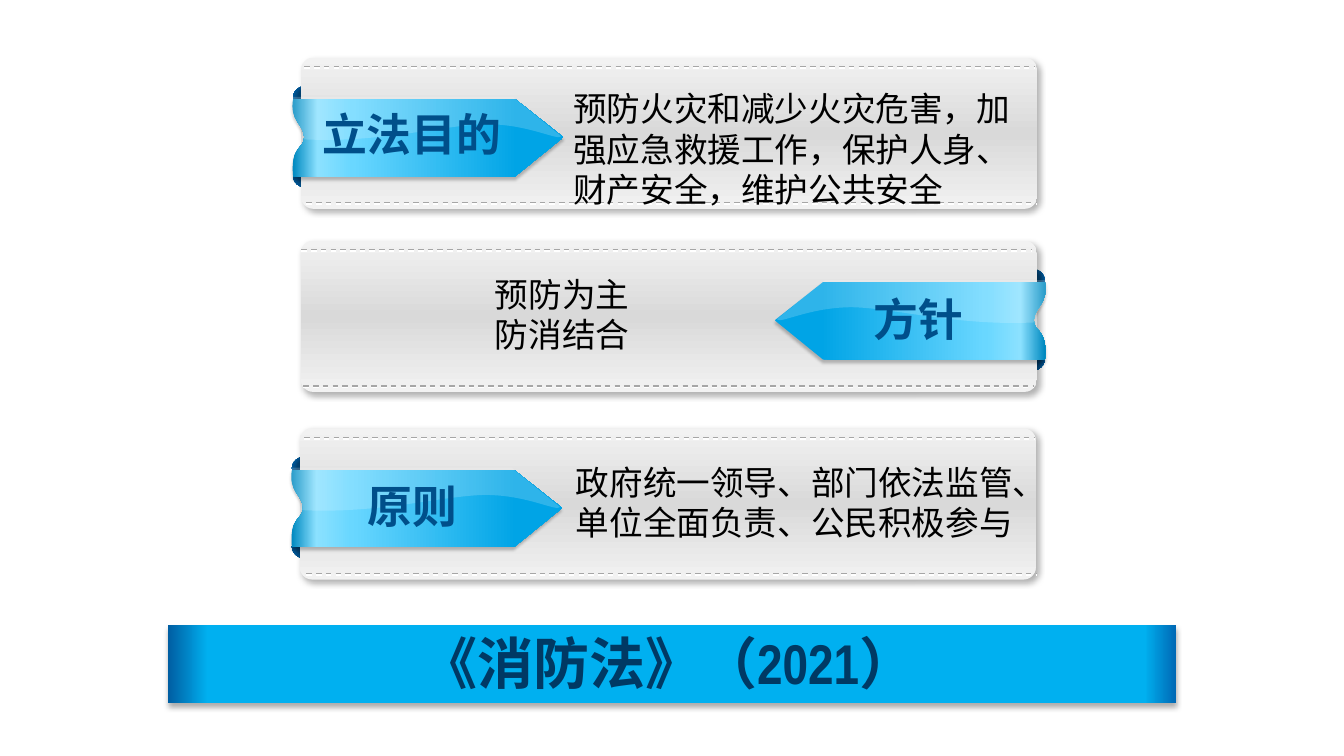
from dataclasses import dataclass
from typing import NamedTuple

from pptx import Presentation
from pptx import util as u
from pptx.dml.color import RGBColor
from pptx.enum import dml, lang, shapes, text
from pptx.oxml import parse_xml
from pptx.oxml.ns import nsdecls, qn

CELL = u.Inches(0.1)  # every length below is in cells of this square grid
COLS, ROWS = 133.33, 75
CARD_W, CARD_H = 73, 15
COLORS = {"label": "004F8A", "title": "003964", "body": "000000",
          "dash": "A6A6A6", "white": "FFFFFF", "black": "000000"}
CJK_FONT = "Noto Sans CJK SC"
LABEL_FONT = "Arial Narrow"

# Outlines relative to a card's corner: a pair is a line, six numbers a curve
RIBBON = [(-0.8, 4.1), (21.2, 4.1), (26, 7.9), (21.2, 11.8), (-0.8, 11.8),
          (-1.1, 8.7, 0.3, 9.1, 0.3, 7.9), (0.3, 6.6, -1.2, 6.3, -0.8, 4.1)]
GLOSS = [(-1, 3.9), (21, 3.9), (25.8, 7.8), (25.5, 8.3, 22.6, 6.6, 18.3, 6.6),
         (14, 6.7, 7.8, 8.5, 0.1, 8.1), (0.1, 7.9, 0.1, 7.8, 0.1, 7.7),
         (0.1, 6.5, -1.4, 6.2, -1, 3.9)]


class Shadow(NamedTuple):
    color: str
    alpha: int
    blur: float
    dist: float
    angle: int


class Gradient(NamedTuple):
    stops: tuple
    angle: int = 0
    circle: bool = False


FOLD_FILL = Gradient(((44, "004272"), (81, "005EA2"), (100, "0070C0")), circle=True)
CARD_FILL = Gradient(((0, "F2F2F2"), (50, "D9D9D9"), (100, "F2F2F2")), 90)
RIBBON_STOPS = ((0, "0089C0"), (9, "8BE1FF"), (22, "69D7FF"), (83, "00A4E6"))
BANNER_FILL = Gradient(((0, "005EA2"), (4, "00B0F0"), (97, "00ADED"), (100, "0069B5")))
CARD_SHADOW = Shadow(COLORS["black"], 30, 4.5, 2.6, 53)
RIBBON_SHADOW = Shadow(COLORS["black"], 23, 2, 2, 90)
BANNER_SHADOW = Shadow(COLORS["black"], 32, 4, 3, 90)
DASH_SHADOW = Shadow(COLORS["white"], 100, 0, 1, 90)


@dataclass
class Card:
    x: float
    y: float
    dash_x: float
    label: str
    label_at: tuple
    body: list
    body_at: tuple
    body_h: float
    mirrored: bool = False


CARDS = [
    Card(29.88, 5.72, 30.2, "立法目的", (30.1, 11.1),
         ["预防火灾和减少火灾危害，加强应急救援工作，保护人身、财产安全，维护公共安全"],
         (55.9, 8.25), 13.1),
    Card(29.86, 23.88, 29.9, "方针", (80.36, 29.5),
         ["预防为主", "防消结合"], (32.26, 26.66), 9.1, mirrored=True),
    Card(29.76, 42.5, 30.2, "原则", (30.16, 48),
         ["政府统一领导、部门依法监管、单位全面负责、公民积极参与"],
         (56.15, 45.3), 9.1),
]


def g(n: float) -> int:
    """Cells to EMU."""
    return round(n * CELL)


def shadow_xml(sh: Shadow):
    return parse_xml(
        f'<a:outerShdw {nsdecls("a")} blurRad="{u.Pt(sh.blur)}" dist="{u.Pt(sh.dist)}" '
        f'dir="{sh.angle * 60000}" algn="t" rotWithShape="0"><a:srgbClr val="{sh.color}">'
        f'<a:alpha val="{sh.alpha * 1000}"/></a:srgbClr></a:outerShdw>')


def gradient_xml(grad: Gradient):
    stops = "".join(f'<a:gs pos="{pos * 1000}"><a:srgbClr val="{c}"/></a:gs>'
                    for pos, c in grad.stops)
    half = " ".join(f'{side}="50000"' for side in "ltrb")
    run = (f'<a:path path="circle"><a:fillToRect {half}/></a:path>' if grad.circle
           else f'<a:lin ang="{grad.angle * 60000}" scaled="0"/>')
    return parse_xml(f'<a:gradFill {nsdecls("a")} rotWithShape="1">'
                     f'<a:gsLst>{stops}</a:gsLst>{run}</a:gradFill>')


def paint(sp, grad: Gradient | None = None, shadow: Shadow | None = None) -> None:
    sp.line.fill.background()
    sp.shadow.inherit = False
    props = sp._element.spPr
    if grad:
        sp.fill.gradient()
        props.replace(props.find(qn("a:gradFill")), gradient_xml(grad))
    if shadow:
        props.find(qn("a:effectLst")).append(shadow_xml(shadow))


def add_preset(s, kind, x: float, y: float, w: float, h: float):
    return s.shapes.add_shape(kind, g(x), g(y), g(w), g(h))


def add_outline(s, card: Card, outline: list):
    """Draw an outline's corners, then bend the sides that are curves."""
    def place(x: float, y: float) -> tuple:
        return g(card.x + (CARD_W - x if card.mirrored else x)), g(card.y + y)

    ends = [place(*seg[-2:]) for seg in outline]
    builder = s.shapes.build_freeform(*ends[0], scale=1.0)
    builder.add_line_segments(ends[1:], close=True)
    sp = builder.convert_to_shape()
    sides = list(sp._element.spPr.iter(qn("a:lnTo")))
    for side, seg in zip(sides, outline[1:]):
        if len(seg) == 6:
            places = [place(*seg[i:i + 2]) for i in (0, 2, 4)]
            pts = "".join(f'<a:pt x="{x - sp.left}" y="{y - sp.top}"/>' for x, y in places)
            side.getparent().replace(side, parse_xml(
                f'<a:cubicBezTo {nsdecls("a")}>{pts}</a:cubicBezTo>'))
    return sp


def add_dash(s, x: float, y: float) -> None:
    line = s.shapes.add_connector(shapes.MSO_CONNECTOR.STRAIGHT,
                                  g(x), g(y), g(x + 72.4), g(y))
    line.line.color.rgb = RGBColor.from_string(COLORS["dash"])
    line.line.width = u.Pt(1)
    line.line.dash_style = dml.MSO_LINE.DASH
    effects = parse_xml(f'<a:effectLst {nsdecls("a")}/>')
    effects.append(shadow_xml(DASH_SHADOW))
    line._element.spPr.append(effects)


def write(sp, lines: list, *, size: float, color: str, font: str = CJK_FONT,
          bold: bool = False, centered: bool = False, spacing: float = 1.0) -> None:
    tf = sp.text_frame
    tf.word_wrap = True
    tf.auto_size = text.MSO_AUTO_SIZE.SHAPE_TO_FIT_TEXT
    tf.vertical_anchor = text.MSO_ANCHOR.TOP
    for i, line in enumerate(lines):
        p = tf.add_paragraph() if i else tf.paragraphs[0]
        p.alignment = text.PP_ALIGN.CENTER if centered else text.PP_ALIGN.LEFT
        p.line_spacing = spacing
        r = p.add_run()
        r.text = line
        r.font.size, r.font.bold, r.font.name = u.Pt(size), bold, font
        r.font.color.rgb = RGBColor.from_string(color)
        r.font.language_id = lang.MSO_LANGUAGE_ID.SIMPLIFIED_CHINESE
        r._r.get_or_add_rPr().append(
            parse_xml(f'<a:ea {nsdecls("a")} typeface="{CJK_FONT}"/>'))


def add_card(s, card: Card) -> None:
    fold_x = card.x + (CARD_W - 1.8 if card.mirrored else -0.8)
    for dy in (2.8, 10.6):
        paint(add_preset(s, shapes.MSO_SHAPE.OVAL, fold_x, card.y + dy, 2.6, 2.3), FOLD_FILL)
    panel = add_preset(s, shapes.MSO_SHAPE.ROUNDED_RECTANGLE, card.x, card.y, CARD_W, CARD_H)
    panel.adjustments[0] = 0.08
    paint(panel, CARD_FILL, CARD_SHADOW)

    stops = RIBBON_STOPS
    if card.mirrored:
        stops = tuple((100 - pos, c) for pos, c in reversed(stops))
    paint(add_outline(s, card, RIBBON), Gradient(stops), RIBBON_SHADOW)
    gloss = add_outline(s, card, GLOSS)
    paint(gloss)
    gloss.fill.solid()
    gloss.fill.fore_color.rgb = RGBColor.from_string(COLORS["white"])
    gloss._element.spPr.find(".//" + qn("a:srgbClr")).append(
        parse_xml(f'<a:alpha {nsdecls("a")} val="18000"/>'))

    add_dash(s, card.dash_x, card.y + 0.9)
    add_dash(s, card.dash_x + 0.2, card.y + 14.4)
    label = s.shapes.add_textbox(*map(g, (*card.label_at, 21.5, 5.3)))
    write(label, [card.label], size=32, color=COLORS["label"], font=LABEL_FONT,
          bold=True, centered=True, spacing=0.8)
    body = s.shapes.add_textbox(*map(g, (*card.body_at, 47, card.body_h)))
    write(body, card.body, size=24, color=COLORS["body"], centered=card.mirrored)


def main() -> None:
    prs = Presentation()
    prs.slide_width, prs.slide_height = g(COLS), g(ROWS)
    s = prs.slides.add_slide(prs.slide_layouts[5])
    for card in CARDS:
        add_card(s, card)
    paint(add_preset(s, shapes.MSO_SHAPE.RECTANGLE, 16.66, 62, 100, 7.7),
          BANNER_FILL, BANNER_SHADOW)
    title = s.shapes.title
    title.left, title.top, title.width, title.height = map(g, (39.2, 63.1, 54.2, 6.4))
    write(title, ["《消防法》（2021）"], size=40, color=COLORS["title"], font=LABEL_FONT,
          bold=True, centered=True, spacing=0.8)
    s.shapes._spTree.append(title._element)  # in front of the banner
    prs.save("out.pptx")


if __name__ == "__main__":
    main()
